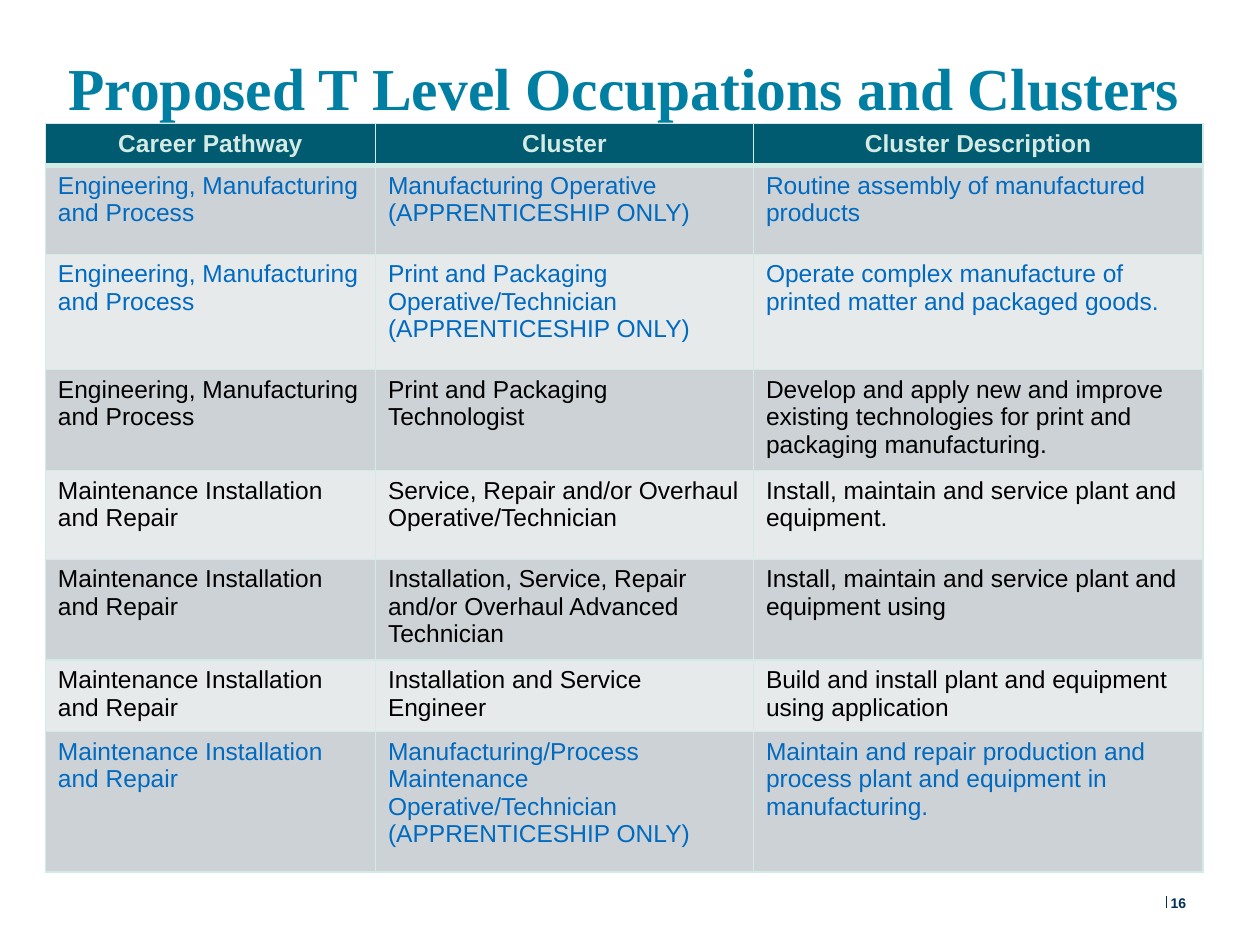
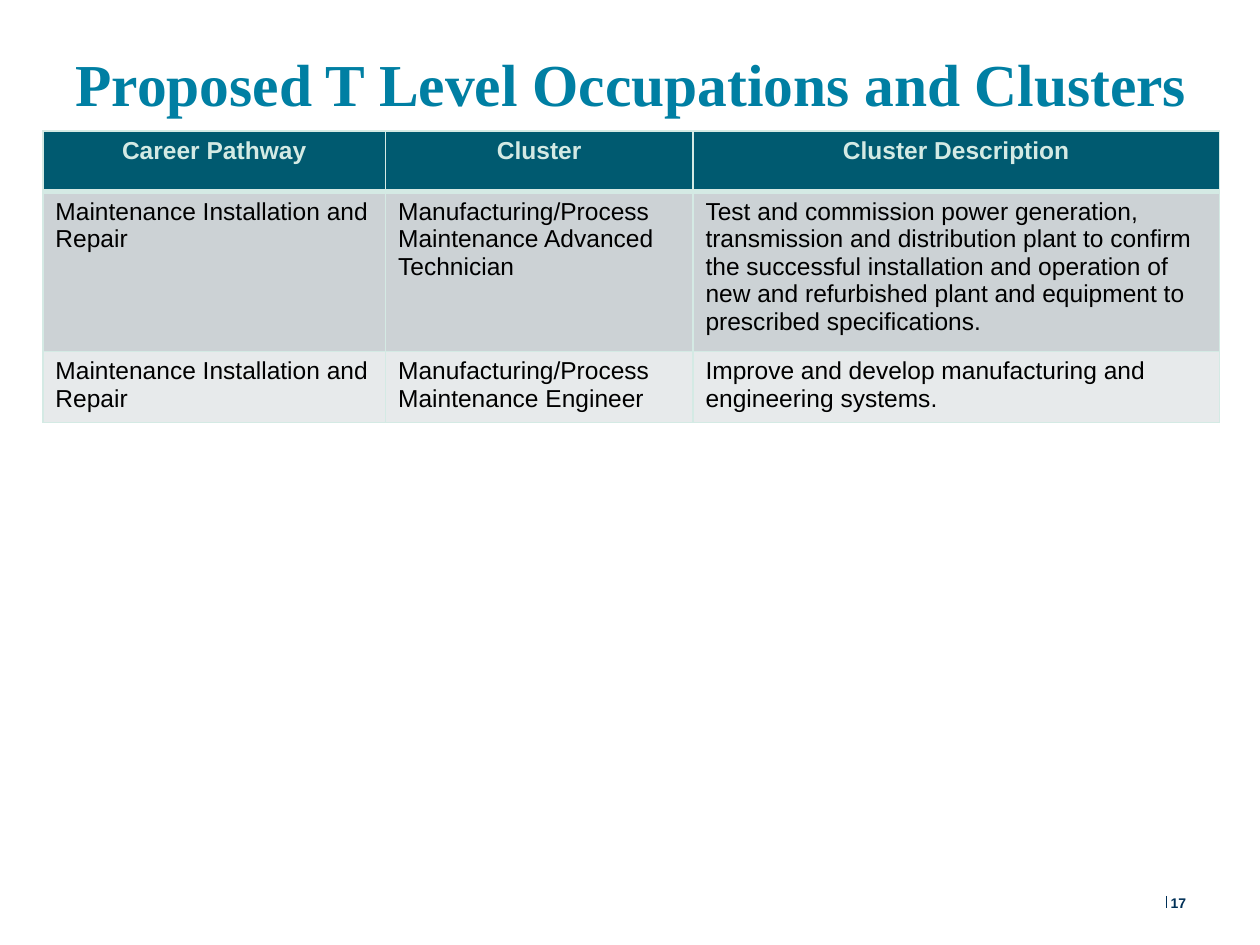
from dataclasses import dataclass

from lxml import etree
from pptx import Presentation
from pptx import util as u
from pptx.dml.color import RGBColor
from pptx.enum import shapes, text
from pptx.oxml import ns


@dataclass(frozen=True)
class Theme:
    """Colours, fonts and type sizes shared by the slides."""
    title: str = "007FA3"
    header: str = "005A70"
    border: str = "D4EAE4"
    bands: tuple = ("CCD2D5", "E7EAEB")
    body: str = "000000"
    apprenticeship: str = "006AC1"
    footer: str = "003057"
    title_font: str = "Times New Roman"
    body_font: str = "Arial"
    title_size: int = 34
    table_size: int = 14
    footer_size: int = 8


THEME = Theme()
GRID = u.Inches(10) // 100
TITLE = "Proposed T Level Occupations and Clusters"
HEADER = ("Career Pathway", "Cluster", "Cluster Description")
ENGINEERING = "Engineering, Manufacturing and Process"
MAINTENANCE = "Maintenance Installation and Repair"
APPRENTICE_ONLY = "(APPRENTICESHIP ONLY)"

OCCUPATIONS = [
    dict(
        number=16, title_box=(3.6, 2.2, 91.9, 9.3), table_at=(3.6, 9.8),
        columns=(26.2, 30, 35.7),
        heights=(3.3, 7.05, 9.15, 7.85, 7.05, 7.9, 5.65, 11.15),
        rows=[
            (ENGINEERING, f"Manufacturing Operative {APPRENTICE_ONLY}",
             "Routine assembly of manufactured products"),
            (ENGINEERING, f"Print and Packaging Operative/Technician {APPRENTICE_ONLY}",
             "Operate complex manufacture of printed matter and packaged goods."),
            (ENGINEERING, "Print and Packaging Technologist",
             "Develop and apply new and improve existing technologies for print "
             "and packaging manufacturing."),
            (MAINTENANCE, "Service, Repair and/or Overhaul Operative/Technician",
             "Install, maintain and service plant and equipment."),
            (MAINTENANCE, "Installation, Service, Repair and/or Overhaul Advanced Technician",
             "Install, maintain and service plant and equipment using"),
            (MAINTENANCE, "Installation and Service Engineer",
             "Build and install plant and equipment using application"),
            (MAINTENANCE,
             f"Manufacturing/Process Maintenance Operative/Technician {APPRENTICE_ONLY}",
             "Maintain and repair production and process plant and equipment "
             "in manufacturing."),
        ]),
    dict(
        number=17, title_box=(3.4, 1.9, 93.4, 7.1), table_at=(3.4, 10.4),
        columns=(27.2, 24.4, 41.8), heights=(4.8, 4.8, 4.8),
        rows=[
            (MAINTENANCE, "Manufacturing/Process Maintenance Advanced Technician",
             "Test and commission power generation, transmission and distribution "
             "plant to confirm the successful installation and operation of new and "
             "refurbished plant and equipment to prescribed specifications."),
            (MAINTENANCE, "Manufacturing/Process Maintenance Engineer",
             "Improve and develop manufacturing and engineering systems."),
        ]),
]


def cells(*values):
    """Convert grid units to lengths."""
    return [u.Emu(round(v * GRID)) for v in values]


def style(p, font, size, color, bold=False):
    """Format every run of a paragraph."""
    for r in p.runs:
        r.font.name, r.font.size, r.font.bold = font, u.Pt(size), bold
        r.font.color.rgb = RGBColor.from_string(color)


def add_title(s, box):
    """Place and format the title placeholder in its box."""
    sp = s.shapes.title
    sp.left, sp.top, sp.width, sp.height = cells(*box)
    tf = sp.text_frame
    tf.text = TITLE
    tf.word_wrap, tf.auto_size = True, text.MSO_AUTO_SIZE.NONE
    tf.vertical_anchor = text.MSO_ANCHOR.TOP
    tf.margin_left, tf.margin_top, tf.margin_right, tf.margin_bottom = cells(1, 0.8, 1, 0)
    p = tf.paragraphs[0]
    p.alignment, p.line_spacing = text.PP_ALIGN.CENTER, 1.18
    style(p, THEME.title_font, THEME.title_size, THEME.title, True)


def add_footer(s, number, box=(92.6, 71, 5, 1.4)):
    """Draw the divider and the slide number in the footer box."""
    left, top, width, height = box
    line = s.shapes.add_connector(
        shapes.MSO_CONNECTOR.STRAIGHT, *cells(left, top + 0.1, left, top + 1.1))
    line.line.color.rgb = RGBColor.from_string(THEME.footer)
    line.line.width = u.Pt(0.75)
    etree.SubElement(line._element.spPr, ns.qn("a:effectLst"))
    tf = s.shapes.add_textbox(*cells(left + 0.3, top, width - 0.3, height)).text_frame
    tf.text = str(number)
    tf.word_wrap = True
    tf.vertical_anchor = text.MSO_ANCHOR.MIDDLE
    tf.margin_left = tf.margin_top = tf.margin_right = tf.margin_bottom = 0
    style(tf.paragraphs[0], THEME.body_font, THEME.footer_size, THEME.footer, True)


def add_borders(cell, **widths):
    """Draw the cell's borders, one point wide unless given."""
    tcPr = cell._tc.get_or_add_tcPr()
    for side in "LRTB":
        ln = etree.SubElement(tcPr, ns.qn(f"a:ln{side}"), w=str(u.Pt(widths.get(side, 1))))
        fill = etree.SubElement(ln, ns.qn("a:solidFill"))
        etree.SubElement(fill, ns.qn("a:srgbClr"), val=THEME.border)


def fill_cell(cell, value, fill, color, header=False, **borders):
    """Write one table cell with its fill, borders and text style."""
    cell.text = value
    add_borders(cell, **borders)
    cell.fill.solid()
    cell.fill.fore_color.rgb = RGBColor.from_string(fill)
    p = cell.text_frame.paragraphs[0]
    p.alignment = text.PP_ALIGN.CENTER if header else text.PP_ALIGN.LEFT
    style(p, THEME.body_font, THEME.table_size, color, header)


def add_occupations(s, at, columns, heights, rows):
    """Build the banded table, colouring apprenticeship-only rows."""
    box = cells(*at, sum(columns), sum(heights))
    table = s.shapes.add_table(len(rows) + 1, len(columns), *box).table
    for column, width in zip(table.columns, cells(*columns)):
        column.width = width
    for row, height in zip(table.rows, cells(*heights)):
        row.height = height
    for c, value in enumerate(HEADER):
        fill_cell(table.cell(0, c), value, THEME.header, THEME.border, True, B=3)
    for i, row in enumerate(rows):
        color = THEME.apprenticeship if APPRENTICE_ONLY in row[1] else THEME.body
        for c, value in enumerate(row):
            fill_cell(table.cell(i + 1, c), value, THEME.bands[i % 2], color,
                      T=1 if i else 3)


def add_occupation_slide(prs, number, title_box, table_at, columns, heights, rows):
    """Add a slide with a title, an occupations table and a footer."""
    s = prs.slides.add_slide(prs.slide_layouts[5])
    add_title(s, title_box)
    add_footer(s, number)
    add_occupations(s, table_at, columns, heights, rows)


def main():
    """Build and save the presentation."""
    prs = Presentation()
    prs.slide_width, prs.slide_height = cells(100, 75)
    for slide in OCCUPATIONS:
        add_occupation_slide(prs, **slide)
    prs.save("out.pptx")


if __name__ == "__main__":
    main()
